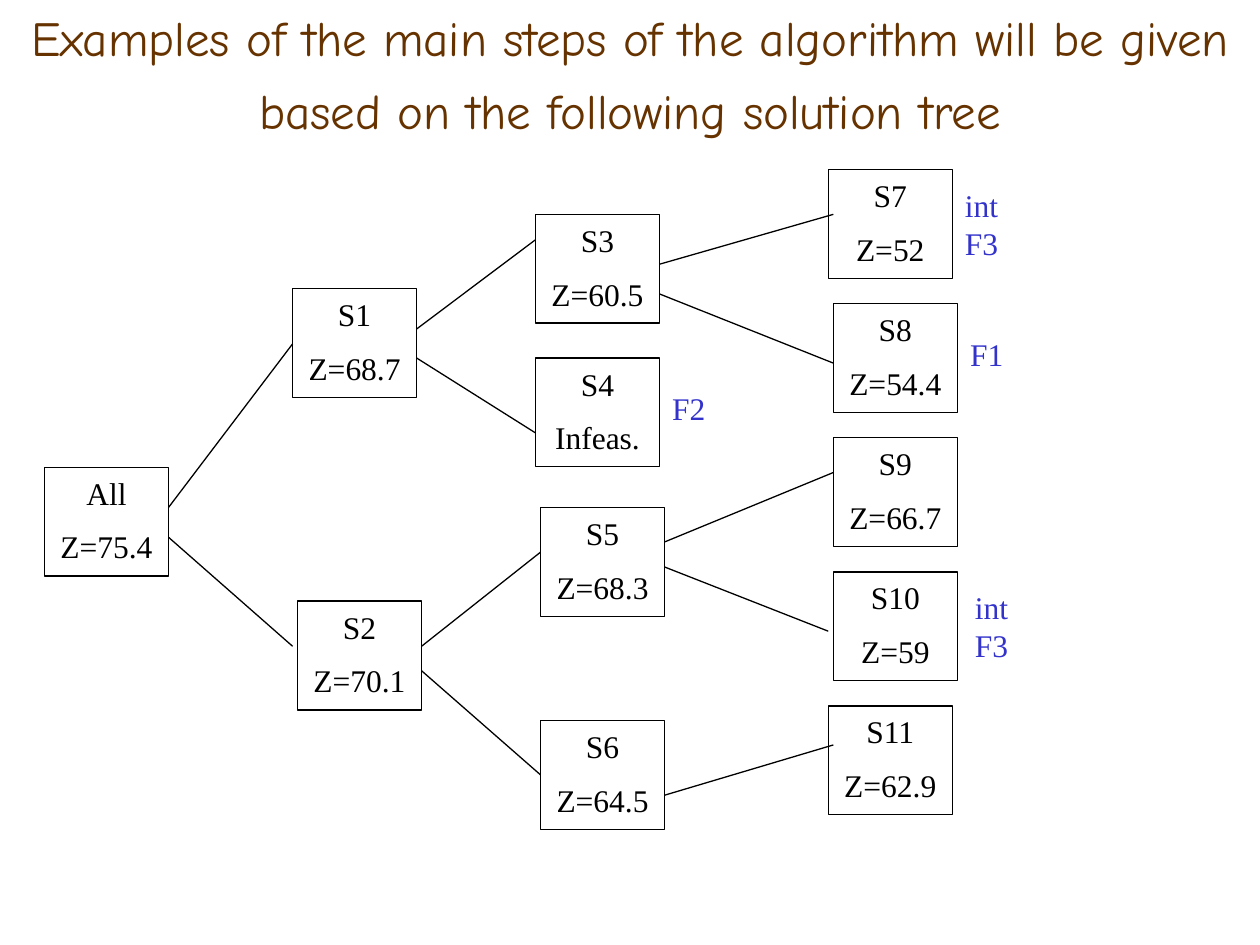
from pptx import Presentation
from pptx.dml.color import RGBColor
from pptx.enum.shapes import MSO_CONNECTOR, MSO_SHAPE
from pptx.enum.text import MSO_ANCHOR, MSO_AUTO_SIZE, PP_ALIGN
from pptx.oxml.ns import qn
from pptx.util import Pt
from lxml.etree import SubElement

BLACK, BROWN, BLUE = "000000", "663300", "3333CC"
BOX_WIDTH, BOX_HEIGHT = 70.9, 62.2
LEAF_TOP, LEAF_STEP = 97, 76.6


def color(hex_string):
    return RGBColor.from_string(hex_string)


def format_run(run, font_name, size, hex_string):
    run.font.name = font_name
    run.font.size = Pt(size)
    run.font.color.rgb = color(hex_string)


presentation = Presentation()
presentation.slide_width, presentation.slide_height = Pt(720), Pt(540)
slide = presentation.slides.add_slide(presentation.slide_layouts[5])

# Title; the deeper bottom margin lifts the widely spaced lines
title = slide.shapes.title
title.left, title.top, title.width, title.height = Pt(0), Pt(0), Pt(720), Pt(83)
frame = title.text_frame
frame.auto_size = MSO_AUTO_SIZE.NONE
frame.vertical_anchor = MSO_ANCHOR.MIDDLE
frame.margin_bottom = Pt(11)
frame.text = ("Examples of the main steps of the algorithm will be given "
              "based on the following solution tree")
paragraph = frame.paragraphs[0]
paragraph.alignment = PP_ALIGN.CENTER
paragraph.line_spacing = Pt(41.7)
format_run(paragraph.runs[0], "Comic Neue", 28, BROWN)

# Tree nodes: name -> (left, top, result)
nodes = {
    "All": (25.4, 267, "Z=75.4"),
    "S1": (167.2, 165, "Z=68.7"),
    "S2": (170, 343.5, "Z=70.1"),
    "S3": (306, 122.5, "Z=60.5"),
    "S4": (306, 204.6, "Infeas."),
    "S5": (308.9, 290, "Z=68.3"),
    "S6": (308.9, 411.7, "Z=64.5"),
}
leaves = [("S7", 473.3, "Z=52"), ("S8", 476.2, "Z=54.4"), ("S9", 476.2, "Z=66.7"),
          ("S10", 476.2, "Z=59"), ("S11", 473.3, "Z=62.9")]
for index, (name, left, result) in enumerate(leaves):
    nodes[name] = (left, LEAF_TOP + index * LEAF_STEP, result)

for name, (left, top, result) in nodes.items():
    box = slide.shapes.add_shape(
        MSO_SHAPE.RECTANGLE, Pt(left), Pt(top), Pt(BOX_WIDTH), Pt(BOX_HEIGHT))
    box.shadow.inherit = False
    box.fill.background()
    box.line.color.rgb = color(BLACK)
    box.line.width = Pt(0.75)
    frame = box.text_frame
    frame.word_wrap = False
    frame.vertical_anchor = MSO_ANCHOR.MIDDLE
    frame.margin_bottom = Pt(6)
    frame.text = f"{name}\n{result}"
    frame.paragraphs[1].space_before = Pt(9)
    for paragraph in frame.paragraphs:
        paragraph.alignment = PP_ALIGN.CENTER
        format_run(paragraph.runs[0], "Times New Roman", 18, BLACK)

# Branches: parent, start height, end point
branches = [
    ("All", 290, 167.2, 196.5), ("All", 307, 167.2, 369.3),
    ("S1", 188, 306, 137), ("S1", 204.6, 306, 247.4),
    ("S2", 369.3, 308.9, 315.5), ("S2", 383.3, 308.9, 442.8),
    ("S3", 151, 476.2, 122.5), ("S3", 168, 476.2, 207.5),
    ("S5", 309.7, 476.2, 270), ("S5", 324, 473.3, 360.7),
    ("S6", 454.4, 476.2, 425.7),
]
for parent, start_y, end_x, end_y in branches:
    start_x = nodes[parent][0] + BOX_WIDTH
    branch = slide.shapes.add_connector(
        MSO_CONNECTOR.STRAIGHT, Pt(start_x), Pt(start_y), Pt(end_x), Pt(end_y))
    branch.line.color.rgb = color(BLACK)
    branch.line.width = Pt(0.75)
    SubElement(branch._element.spPr, qn("a:effectLst"))

# Fathoming labels; "\v" is a line break within the paragraph
labels = [("F2", 377, 219, 29), ("int\vF3", 544.3, 103, 50),
          ("F1", 547.2, 188, 29), ("int\vF3", 550, 332.6, 50)]
for text, left, top, height in labels:
    label = slide.shapes.add_textbox(Pt(left), Pt(top), Pt(40), Pt(height))
    label.text_frame.word_wrap = True
    paragraph = label.text_frame.paragraphs[0]
    paragraph.text = text
    for run in paragraph.runs:
        format_run(run, "Times New Roman", 18, BLUE)

presentation.save("out.pptx")
